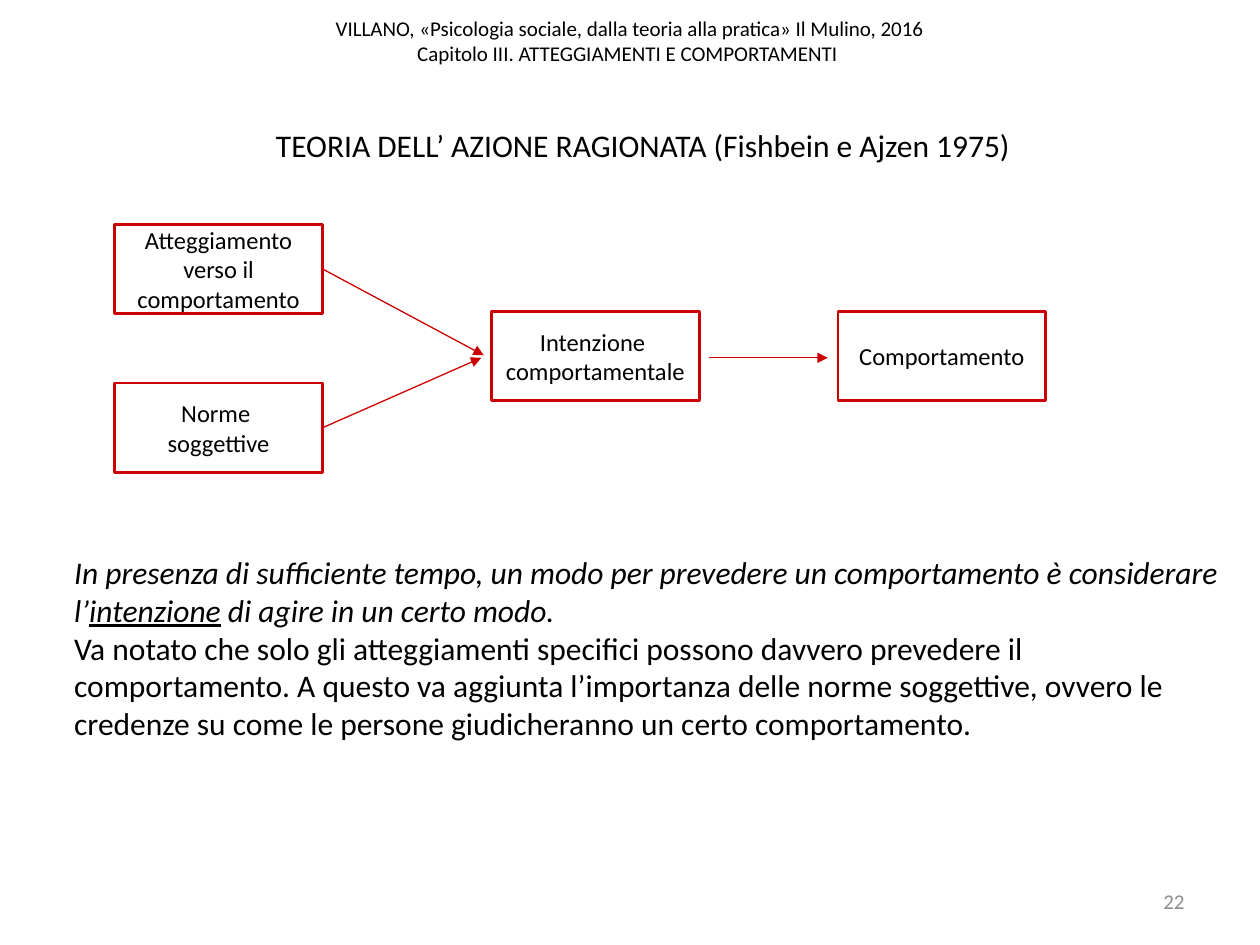
"""Build the slide on the theory of reasoned action."""
from dataclasses import dataclass

from lxml import etree
from pptx import Presentation
from pptx.dml.color import RGBColor
from pptx.enum.shapes import MSO_CONNECTOR, MSO_SHAPE
from pptx.enum.text import MSO_ANCHOR, MSO_AUTO_SIZE, PP_ALIGN
from pptx.oxml.ns import qn
from pptx.util import Inches, Pt

STRAIGHT, RECTANGLE = MSO_CONNECTOR.STRAIGHT, MSO_SHAPE.RECTANGLE
TOP, MIDDLE = MSO_ANCHOR.TOP, MSO_ANCHOR.MIDDLE
LEFT, CENTER, RIGHT = PP_ALIGN.LEFT, PP_ALIGN.CENTER, PP_ALIGN.RIGHT
FIXED = MSO_AUTO_SIZE.NONE


@dataclass(frozen=True)
class Theme:
    font: str = "Calibri"
    ink: RGBColor = RGBColor(0x00, 0x00, 0x00)
    accent: RGBColor = RGBColor(0xCC, 0x00, 0x00)
    muted: RGBColor = RGBColor(0x8C, 0x8C, 0x8C)
    small: int = 12
    label: int = 14
    body: int = 18
    border: float = 1.5
    arrow: float = 0.75


THEME = Theme()


def write(shape, paragraphs, size, align=LEFT, anchor=TOP, color=THEME.ink, wrap=True):
    """Fill a shape with paragraphs given as lists of (text, italic, underline)."""
    frame = shape.text_frame
    frame.auto_size = FIXED
    frame.word_wrap = wrap
    frame.vertical_anchor = anchor
    for index, spans in enumerate(paragraphs):
        para = frame.add_paragraph() if index else frame.paragraphs[0]
        para.alignment = align
        for text, italic, underline in spans:
            for number, line in enumerate(text.split("\n")):
                if number:
                    para.add_line_break()
                span = para.add_run()
                span.text = line
                span.font.name = THEME.font
                span.font.size = Pt(size)
                span.font.color.rgb = color
                span.font.italic = italic
                span.font.underline = underline


def place(shape, left, top, width, height):
    """Move and size a shape, in inches."""
    shape.left, shape.top = Inches(left), Inches(top)
    shape.width, shape.height = Inches(width), Inches(height)


deck = Presentation()
deck.slide_width, deck.slide_height = Inches(10), Inches(7.5)
page = deck.slides.add_slide(deck.slide_layouts[5])

title = page.shapes.title
place(title, 2.09, 0.95, 6.09, 0.4)
write(title, [[("TEORIA DELL’ AZIONE RAGIONATA (Fishbein e Ajzen 1975)", False, False)]],
      THEME.body, wrap=False)

header = "VILLANO, «Psicologia sociale, dalla teoria alla pratica» Il Mulino, 2016\nCapitolo III. ATTEGGIAMENTI E COMPORTAMENTI "
intention = [
    [("In presenza di sufficiente tempo, un modo per prevedere un comportamento è considerare l’", True, False),
     ("intenzione", True, True),
     (" di agire in un certo modo.", True, False)],
    [("Va notato che solo gli atteggiamenti specifici possono davvero prevedere il comportamento. "
      "A questo va aggiunta l’importanza delle norme soggettive, ovvero le credenze su come le "
      "persone giudicheranno un certo comportamento.", False, False)],
]
texts = [
    ((0, -0.11, 10, 0.87), [[(header, False, False)]], THEME.small, CENTER, MIDDLE, THEME.ink),
    ((0.49, 4.34, 9.29, 1.62), intention, THEME.body, LEFT, TOP, THEME.ink),
    ((7.17, 6.95, 2.33, 0.4), [[("22", False, False)]], THEME.small, RIGHT, MIDDLE, THEME.muted),
]
for area, paragraphs, size, align, anchor, color in texts:
    box = page.shapes.add_textbox(0, 0, 0, 0)
    place(box, *area)
    write(box, paragraphs, size, align, anchor, color)

box_width, box_height = 1.65, 0.71
causes, middle, outcome = 0.91, 3.9, 6.65
upper, center, lower = 1.78, 2.47, 3.04
concepts = [
    (causes, upper, ["Atteggiamento verso il comportamento"]),
    (causes, lower, ["Norme ", "soggettive"]),
    (middle, center, ["Intenzione ", "comportamentale"]),
    (outcome, center, ["Comportamento"]),
]
for left, top, lines in concepts:
    concept = page.shapes.add_shape(RECTANGLE, 0, 0, 0, 0)
    place(concept, left, top, box_width, box_height)
    concept.shadow.inherit = False
    concept.fill.background()
    concept.line.color.rgb = THEME.accent
    concept.line.width = Pt(THEME.border)
    write(concept, [[(line, False, False)] for line in lines], THEME.label, CENTER, MIDDLE)

half, gap = box_height / 2, 0.08
causes_edge, axis = causes + box_width, 2.84
arrows = [
    (causes_edge, upper + half, middle - 0.06, axis - 0.02),
    (causes_edge, lower + half, middle - gap, axis),
    (middle + box_width + gap, axis, outcome - gap, axis),
]
for ends in arrows:
    arrow = page.shapes.add_connector(STRAIGHT, *map(Inches, ends))
    arrow.line.color.rgb = THEME.accent
    arrow.line.width = Pt(THEME.arrow)
    etree.SubElement(arrow.line._get_or_add_ln(), qn("a:tailEnd"), type="triangle")
    etree.SubElement(arrow._element.spPr, qn("a:effectLst"))

deck.save("out.pptx")
